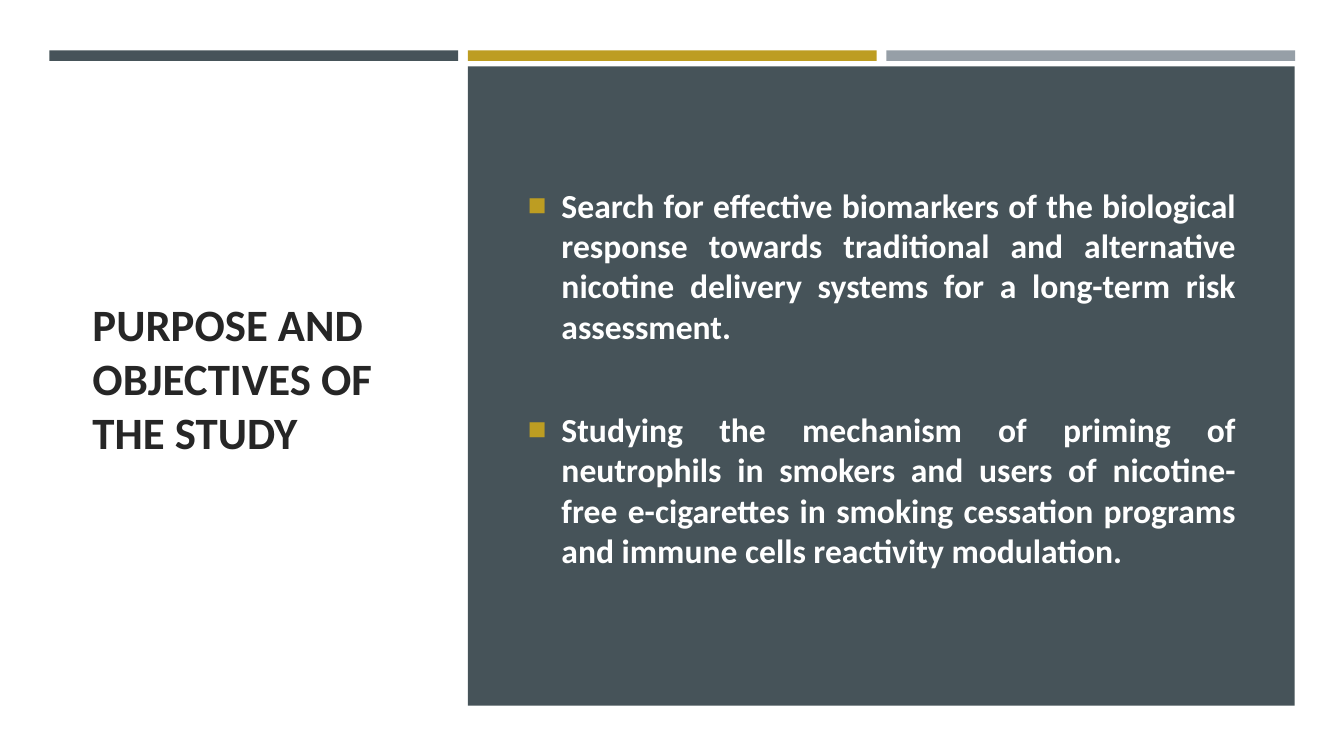
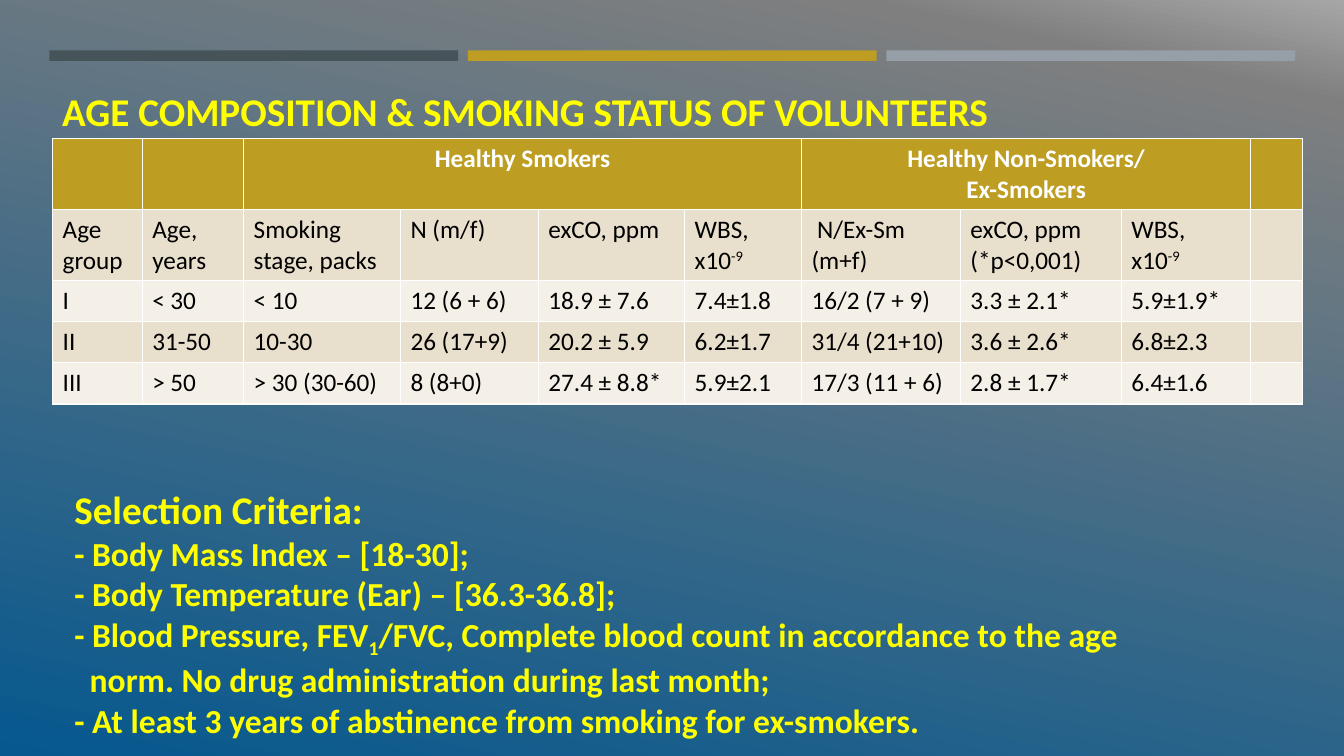
"""Build two slides on a smoking study: its objectives and its volunteers."""
from copy import deepcopy

from lxml import etree
from pptx import Presentation
from pptx.dml.color import RGBColor
from pptx.enum import shapes, text
from pptx.oxml import ns
from pptx.util import Pt

rgb = RGBColor.from_string
SLATE, GOLD, GREY = "465359", "BD9D22", "969FA7"
WHITE, BLACK, INK, YELLOW = "FFFFFF", "000000", "262626", "FFFF00"
SAND, CREAM = "E8DFCC", "F4F0E8"
FONT = "Calibri"


def text_area(slide, left, top, width, height, anchor):
    """Add a wrapping text box and return its frame."""
    frame = slide.shapes.add_textbox(Pt(left), Pt(top), Pt(width), Pt(height)).text_frame
    frame.word_wrap = True
    frame.vertical_anchor = anchor
    return frame


def write(paragraph, content, size, colour, bold=True, shift=0):
    """Write lines split by newlines; every second part between bars is shifted."""
    for number, line in enumerate(content.split("\n")):
        if number:
            paragraph.add_line_break()
        for order, part in enumerate(line.split("|")):
            if part:
                run = paragraph.add_run()
                run.text = part
                run.font.name, run.font.size, run.font.bold = FONT, Pt(size), bold
                run.font.color.rgb = rgb(colour)
                if order % 2:
                    run.font._element.set("baseline", str(shift * 1000))


deck = Presentation()
deck.slide_width, deck.slide_height = Pt(960), Pt(540)
objectives, volunteers = (deck.slides.add_slide(deck.slide_layouts[6]) for _ in range(2))

objectives.background.fill.solid()
objectives.background.fill.fore_color.rgb = rgb(WHITE)

backdrop = volunteers.background.fill
backdrop.gradient()
backdrop.gradient_angle = 258
stop_list = volunteers.element.xpath(".//a:gsLst")[0]
stop_list.append(deepcopy(stop_list[0]))
for stop, (position, colour) in zip(
        backdrop.gradient_stops, [(0, "A6A6A6"), (0.1, "7F7F7F"), (1, "06588E")]):
    stop.position = position
    stop.color.rgb = rgb(colour)

bars = [(35.2 + 299 * i, 36, 292, 7.5, colour) for i, colour in enumerate([SLATE, GOLD, GREY])]
panel = (334.2, 47.5, 590.5, 456.5, SLATE)
for slide, blocks in [(objectives, bars + [panel]), (volunteers, bars)]:
    for left, top, width, height, colour in blocks:
        block = slide.shapes.add_shape(
            shapes.MSO_SHAPE.RECTANGLE, Pt(left), Pt(top), Pt(width), Pt(height))
        block.shadow.inherit = False
        block.fill.solid()
        block.fill.fore_color.rgb = rgb(colour)
        block.line.fill.background()

heading = text_area(objectives, 59, 84.2, 240.5, 370.8, text.MSO_ANCHOR.MIDDLE)
write(heading.paragraphs[0], "PURPOSE AND OBJECTIVES OF THE STUDY", 32, INK)
heading = text_area(volunteers, 37.4, 28, 920, 71.4, text.MSO_ANCHOR.BOTTOM)
write(heading.paragraphs[0], "AGE COMPOSITION & SMOKING STATUS OF VOLUNTEERS", 28, YELLOW)

aims = text_area(objectives, 370, 84.2, 520, 370.8, text.MSO_ANCHOR.MIDDLE)
for gap, aim in [
    (5, "Search for effective biomarkers of the biological response towards traditional "
        "and alternative nicotine delivery systems for a long-term risk assessment."),
    (45, "Studying the mechanism of priming of neutrophils in smokers and users of "
         "nicotine-free e-cigarettes in smoking cessation programs and immune cells "
         "reactivity modulation."),
]:
    paragraph = aims.paragraphs[0] if gap == 5 else aims.add_paragraph()
    write(paragraph, aim, 24, WHITE)
    paragraph.alignment = text.PP_ALIGN.JUSTIFY
    paragraph.space_before = Pt(gap)
    props = paragraph._p.get_or_add_pPr()
    props.set("marL", str(Pt(24)))
    props.set("indent", str(Pt(-24)))
    bullet_colour = etree.SubElement(props, ns.qn("a:buClr"))
    etree.SubElement(bullet_colour, ns.qn("a:srgbClr"), val=GOLD)
    etree.SubElement(props, ns.qn("a:buSzPct"), val="92000")
    etree.SubElement(props, ns.qn("a:buFont"), typeface="Arial")
    etree.SubElement(props, ns.qn("a:buChar"), char="■")

column_widths = [64, 72.5, 112, 98.5, 104.5, 83.5, 113.5, 115, 92.5, 37]
row_heights = [50.4, 50.4, 29.5, 29.5, 29.5]
row_fills = [GOLD, SAND, CREAM, SAND, CREAM]
records = [
    ["", "", "Healthy Smokers", "", "", "", "Healthy Non-Smokers/\nEx-Smokers", "", "", ""],
    ["Age group", "Age, years", "Smoking stage, packs", "N (m/f)", "exCO, ppm", "WBS,\nх10|-9",
     " N/Ex-Sm\n(m+f)", "exCO, ppm\n(*p<0,001)", "WBS,\nх10|-9", ""],
    ["I", "< 30", "< 10", "12 (6 + 6)", "18.9 ± 7.6", "7.4±1.8",
     "16/2 (7 + 9)", "3.3 ± 2.1*", "5.9±1.9*", ""],
    ["II", "31-50", "10-30", "26 (17+9)", "20.2 ± 5.9", "6.2±1.7",
     "31/4 (21+10)", "3.6 ± 2.6*", "6.8±2.3", ""],
    ["III", "> 50", "> 30 (30-60)", "8 (8+0)", "27.4 ± 8.8*", "5.9±2.1",
     "17/3 (11 + 6)", "2.8 ± 1.7*", "6.4±1.6", ""],
]
cohort = volunteers.shapes.add_table(
    len(records), len(column_widths), Pt(37.6), Pt(99.2),
    Pt(sum(column_widths)), Pt(sum(row_heights))).table
for column, width in zip(cohort.columns, column_widths):
    column.width = Pt(width)
for r, record in enumerate(records):
    cohort.rows[r].height = Pt(row_heights[r])
    for c, entry in enumerate(record):
        cell = cohort.cell(r, c)
        cell.fill.solid()
        cell.fill.fore_color.rgb = rgb(row_fills[r])
        for number, line in enumerate(entry.split("\n")):
            frame = cell.text_frame
            paragraph = frame.add_paragraph() if number else frame.paragraphs[0]
            write(paragraph, line, 18, BLACK if r else WHITE, bold=r == 0, shift=30)
            if r == 0:
                paragraph.alignment = text.PP_ALIGN.CENTER
for first, last in [(2, 5), (6, 8)]:
    cohort.cell(0, first).merge(cohort.cell(0, last))

criteria = text_area(volunteers, 46, 343.4, 914, 186.5, text.MSO_ANCHOR.TOP)
write(criteria.paragraphs[0], "Selection Criteria:", 28, YELLOW)
for criterion in [
    "- Body Mass Index – [18-30];",
    "- Body Temperature (Ear) – [36.3-36.8];",
    "- Blood Pressure, FEV|1|/FVC, Complete blood count in accordance to the age\n"
    "norm. No drug administration during last month;",
    "- At least 3 years of abstinence from smoking for ex-smokers.",
]:
    paragraph = criteria.add_paragraph()
    write(paragraph, criterion, 24, YELLOW, shift=-25)
    props = paragraph._p.get_or_add_pPr()
    props.set("marL", str(Pt(11)))
    props.set("indent", str(Pt(-11)))

deck.save("out.pptx")
